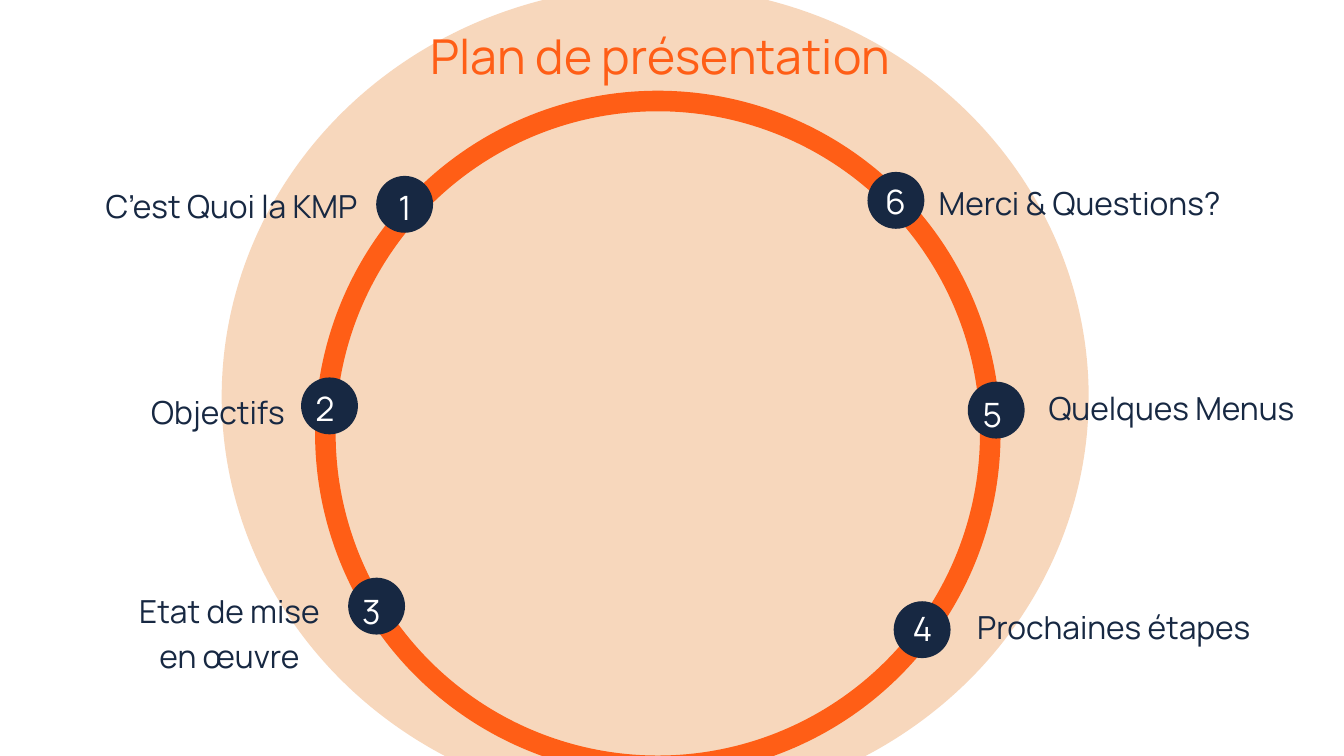
from pptx import Presentation
from pptx.dml.color import RGBColor
from pptx.enum.shapes import MSO_SHAPE as Shape
from pptx.enum.text import MSO_ANCHOR as Anchor, MSO_AUTO_SIZE as AutoSize, PP_ALIGN as Align
from pptx.oxml.ns import qn
from pptx.util import Cm, Pt
from lxml import etree

ORANGE, NAVY, WHITE, TINT = "FF5E16", "172842", "FFFFFF", "E46C0A"
BADGE_SIZE = 2.15

# number, badge corner, number-box corner
BADGES = [
    ("1", (14.22, 6.65), (14.63, 6.88)),
    ("2", (11.38, 14.27), (11.61, 14.45)),
    ("3", (13.16, 21.84), (13.36, 22.12)),
    ("4", (33.78, 22.73), (34.19, 22.78)),
    ("5", (36.58, 14.43), (36.83, 14.68)),
    ("6", (32.79, 6.5), (33.17, 6.65)),
]

# lines, box, alignment, line spacing
LABELS = [
    (["C’est Quoi la KMP"], (2.54, 6.81, 10.97, 1.63), Align.RIGHT, 47.6),
    (["Objectifs"], (3.53, 14.61, 7.24, 1.63), Align.RIGHT, 47.6),
    (["Etat de mise", "en œuvre"], (1.04, 22.15, 15.27, 3.33), Align.CENTER, 47.6),
    (["Prochaines étapes"], (35.79, 23.16, 12.62, 1.3), Align.CENTER, 36),
    (["Quelques Menus"], (38.63, 14.86, 11.3, 1.3), Align.CENTER, 36),
    (["Merci & Questions?"], (35.48, 6.71, 11.91, 1.63), Align.LEFT, 47.6),
]


def color(hex_string):
    return RGBColor.from_string(hex_string)


class Painter:
    """Holds the text style and the slide being drawn."""

    font_name = "Manrope"
    frame_format = dict(margin_left=0, margin_right=0, margin_top=0, margin_bottom=0,
                        word_wrap=True, auto_size=AutoSize.NONE, vertical_anchor=Anchor.TOP)

    def __init__(self, page):
        self.page = page

    def shape(self, kind, box, fill, opacity=None):
        shape = self.page.shapes.add_shape(kind, *map(Cm, box))
        shape.shadow.inherit = False
        shape.line.fill.background()
        shape.fill.solid()
        shape.fill.fore_color.rgb = color(fill)
        if opacity is not None:
            tone = shape.element.spPr.find(".//" + qn("a:srgbClr"))
            etree.SubElement(tone, qn("a:alpha"), val=str(opacity * 1000))
        return shape

    def fill_frame(self, frame, lines, size, tone, align, spacing):
        for name, value in self.frame_format.items():
            setattr(frame, name, value)
        frame.text = "\n".join(lines)
        para_format = dict(alignment=align, line_spacing=Pt(spacing),
                           space_before=Pt(0), space_after=Pt(0))
        for para in frame.paragraphs:
            for name, value in para_format.items():
                setattr(para, name, value)
            for span in para.runs:
                span.font.name = self.font_name
                span.font.size = Pt(size)
                span.font.color.rgb = color(tone)

    def text(self, lines, box, size, tone, align, spacing):
        text_box = self.page.shapes.add_textbox(*map(Cm, box))
        self.fill_frame(text_box.text_frame, lines, size, tone, align, spacing)

    def title(self, words, box, size, tone, spacing):
        title = self.page.shapes.title
        for name, value in zip(("left", "top", "width", "height"), box):
            setattr(title, name, Cm(value))
        self.fill_frame(title.text_frame, [words], size, tone, Align.CENTER, spacing)
        # Bring the title in front of the translucent disc
        title.element.getparent().append(title.element)


def main():
    deck = Presentation()
    deck.slide_width, deck.slide_height = Cm(50.8), Cm(28.58)
    painter = Painter(deck.slides.add_slide(deck.slide_layouts[5]))

    painter.shape(Shape.OVAL, (8.38, -0.53, 32.77, 31.06), TINT, opacity=27)
    ring = painter.shape(Shape.DONUT, (11.91, 3.43, 25.91, 25.91), ORANGE)
    ring.adjustments[0] = 0.03

    painter.title("Plan de présentation", (14.71, 0.64, 20.5, 2.44), 51.5, ORANGE, 72)
    for number, badge_corner, number_corner in BADGES:
        painter.shape(Shape.OVAL, (*badge_corner, BADGE_SIZE, BADGE_SIZE), NAVY)
        painter.text([number], (*number_corner, 1.35, 1.75), 35.9, WHITE, Align.CENTER, 48.9)
    for lines, box, align, spacing in LABELS:
        painter.text(lines, box, 34, NAVY, align, spacing)

    deck.save("out.pptx")


if __name__ == "__main__":
    main()
